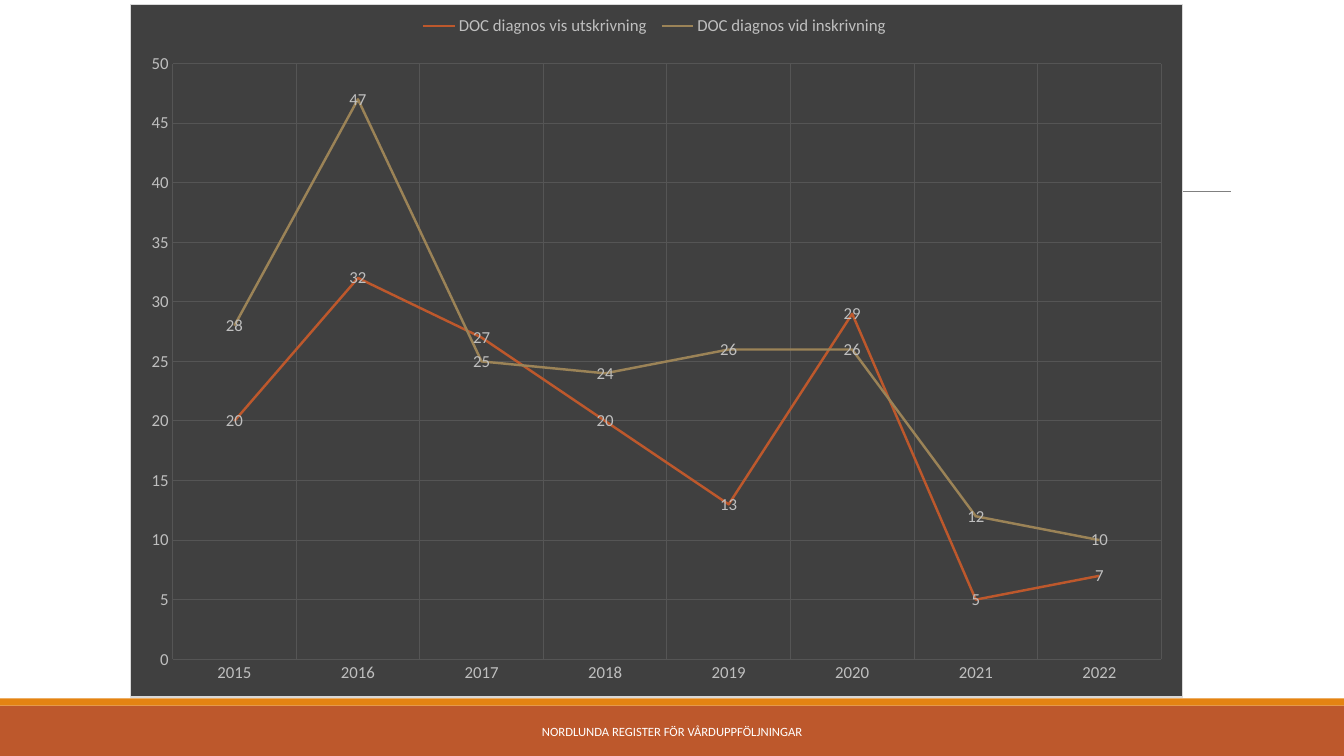
from lxml import etree
from pptx import Presentation
from pptx.chart.data import CategoryChartData
from pptx.dml.color import RGBColor
from pptx.enum.chart import XL_CHART_TYPE, XL_LABEL_POSITION, XL_LEGEND_POSITION, XL_TICK_MARK
from pptx.enum.shapes import MSO_CONNECTOR, MSO_SHAPE
from pptx.enum.text import MSO_ANCHOR, PP_ALIGN
from pptx.oxml import parse_xml
from pptx.oxml.ns import qn
from pptx.util import Inches, Pt

LINE_CHART = XL_CHART_TYPE.LINE
LABEL_CENTER = XL_LABEL_POSITION.CENTER
LEGEND_TOP = XL_LEGEND_POSITION.TOP
NO_TICK = XL_TICK_MARK.NONE
STRAIGHT = MSO_CONNECTOR.STRAIGHT
RECT = MSO_SHAPE.RECTANGLE
MIDDLE = MSO_ANCHOR.MIDDLE
CENTER = PP_ALIGN.CENTER

WHITE = RGBColor(0xFF, 0xFF, 0xFF)
RUST = RGBColor(0xBD, 0x58, 0x2C)
ORANGE = RGBColor(0xE4, 0x83, 0x12)
TAN = RGBColor(0x9B, 0x83, 0x57)
GRAY = RGBColor(0x80, 0x80, 0x80)
CHARCOAL = RGBColor(0x40, 0x40, 0x40)
GRID = RGBColor(0x55, 0x55, 0x55)
SILVER = RGBColor(0xBF, 0xBF, 0xBF)
BORDER = RGBColor(0xD9, 0xD9, 0xD9)

YEARS = [str(year) for year in range(2015, 2023)]
SERIES = [
    ("DOC diagnos vis utskrivning ", [20, 32, 27, 20, 13, 29, 5, 7], RUST),
    ("DOC diagnos vid inskrivning ", [28, 47, 25, 24, 26, 26, 12, 10], TAN),
]


def add_text(tf, text, size=12, color=WHITE, font="Calibri", align=CENTER, anchor=MIDDLE):
    tf.word_wrap = True
    tf.vertical_anchor = anchor
    p = tf.paragraphs[0]
    p.alignment = align
    r = p.add_run()
    r.text = text
    r.font.size = Pt(size)
    r.font.name = font
    r.font.color.rgb = color


class SlideBuilder:
    font = "Calibri"
    chart_size = 12

    def __init__(self, slide):
        self.s = slide

    def bar(self, x, y, w, h, color):
        sp = self.s.shapes.add_shape(RECT, Inches(x), Inches(y), Inches(w), Inches(h))
        sp.shadow.inherit = False
        sp.fill.solid()
        sp.fill.fore_color.rgb = color
        sp.line.fill.background()

    def line(self, x1, y1, x2, y2, color, width):
        cxn = self.s.shapes.add_connector(STRAIGHT, Inches(x1), Inches(y1), Inches(x2), Inches(y2))
        cxn.line.color.rgb = color
        cxn.line.width = Pt(width)
        etree.SubElement(cxn._element.spPr, qn("a:effectLst"))

    def text(self, x, y, w, h, text, **style):
        tb = self.s.shapes.add_textbox(Inches(x), Inches(y), Inches(w), Inches(h))
        add_text(tb.text_frame, text, font=self.font, **style)

    def style_font(self, font):
        font.size = Pt(self.chart_size)
        font.name = self.font
        font.color.rgb = SILVER

    def style_axis(self, axis):
        axis.major_tick_mark = axis.minor_tick_mark = NO_TICK
        axis.format.line.fill.background()
        axis.has_major_gridlines = True
        grid = axis.major_gridlines.format.line
        grid.color.rgb = GRID
        grid.width = Pt(0.75)
        self.style_font(axis.tick_labels.font)

    def chart_area(self, chart, fill, border, width):
        area = parse_xml(
            '<c:spPr xmlns:c="http://schemas.openxmlformats.org/drawingml/2006/chart" '
            'xmlns:a="http://schemas.openxmlformats.org/drawingml/2006/main">'
            f'<a:solidFill><a:srgbClr val="{fill}"/></a:solidFill>'
            f'<a:ln w="{Pt(width)}"><a:solidFill><a:srgbClr val="{border}"/></a:solidFill></a:ln>'
            '</c:spPr>')
        chart._chartSpace.find(qn("c:chart")).addnext(area)

    def line_chart(self, x, y, w, h, categories, series):
        data = CategoryChartData()
        data.categories = categories
        for name, values, _ in series:
            data.add_series(name, values)
        chart = self.s.shapes.add_chart(
            LINE_CHART, Inches(x), Inches(y), Inches(w), Inches(h), data).chart
        self.style_font(chart.font)
        self.chart_area(chart, CHARCOAL, BORDER, 0.75)
        chart.has_title = False

        # Legend and axes
        chart.has_legend = True
        chart.legend.position = LEGEND_TOP
        chart.legend.include_in_layout = False
        self.style_font(chart.legend.font)
        self.style_axis(chart.category_axis)
        self.style_axis(chart.value_axis)
        chart.value_axis.minimum_scale = 0
        chart.value_axis.maximum_scale = 50
        chart.value_axis.major_unit = 5

        # Series lines and value labels
        plot = chart.plots[0]
        plot.vary_by_categories = False
        for ser, (_, _, color) in zip(plot.series, series):
            ser.smooth = False
            ser.format.line.color.rgb = color
            ser.format.line.width = Pt(1.75)
            labels = ser.data_labels
            labels.show_value = True
            labels.position = LABEL_CENTER
            self.style_font(labels.font)


def main():
    prs = Presentation()
    prs.slide_width, prs.slide_height = Inches(13.33), Inches(7.5)
    page = SlideBuilder(prs.slides.add_slide(prs.slide_layouts[6]))

    # Footer bands and rule
    page.bar(0, 7, 13.33, 0.5, RUST)
    page.bar(0, 6.93, 13.33, 0.07, ORANGE)
    page.line(1.31, 1.9, 12.21, 1.9, GRAY, 0.5)
    page.text(4.03, 7.06, 5.27, 0.4, "NORDLUNDA REGISTER FÖR VÅRDUPPFÖLJNINGAR", size=9)

    # Diagnoses per year
    page.line_chart(1.29, 0.04, 10.44, 6.88, YEARS, SERIES)

    prs.save("out.pptx")


if __name__ == "__main__":
    main()
